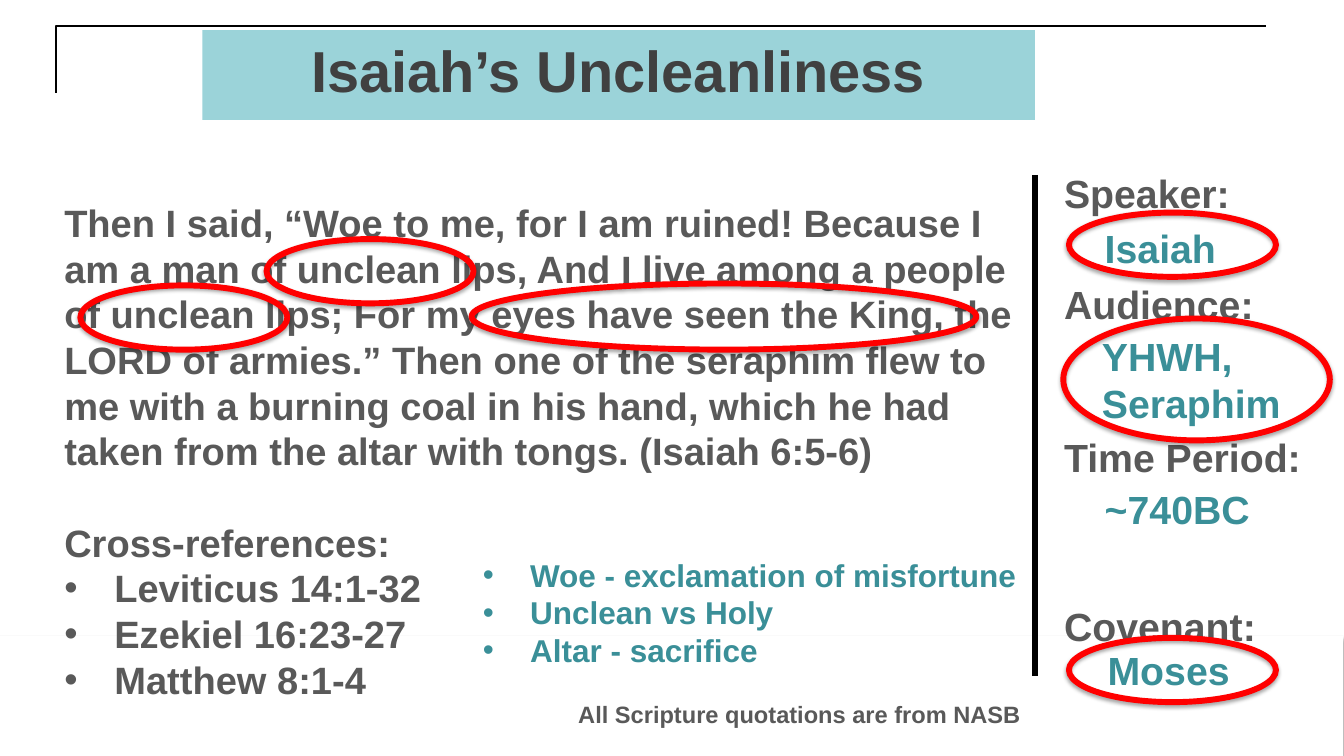
from typing import NamedTuple

from lxml.etree import SubElement
from pptx import Presentation
from pptx.dml.color import RGBColor
from pptx.enum.shapes import MSO_CONNECTOR, MSO_SHAPE
from pptx.enum.text import MSO_ANCHOR, MSO_AUTO_SIZE, PP_ALIGN
from pptx.oxml.ns import qn
from pptx.util import Inches, Pt

BLACK = RGBColor(0x00, 0x00, 0x00)
WHITE = RGBColor(0xFF, 0xFF, 0xFF)
RED = RGBColor(0xFF, 0x00, 0x00)
AQUA = RGBColor(0x9B, 0xD3, 0xD9)
TEAL = RGBColor(0x3A, 0x8F, 0x98)
CHARCOAL = RGBColor(0x40, 0x40, 0x40)
GRAY = RGBColor(0x59, 0x59, 0x59)

PASSAGE = (
    "Then I said, “Woe to me, for I am ruined! Because I am a man of unclean lips, "
    "And I live among a people of unclean lips; For my eyes have seen the King, the "
    "LORD of armies.” Then one of the seraphim flew to me with a burning coal in his "
    "hand, which he had taken from the altar with tongs. (Isaiah 6:5-6)"
)
REFERENCES = ["Leviticus 14:1-32", "Ezekiel 16:23-27", "Matthew 8:1-4"]
NOTES = ["Woe - exclamation of misfortune", "Unclean vs Holy", "Altar - sacrifice"]


class Area(NamedTuple):
    left: float
    top: float
    width: float
    height: float

    def lengths(self) -> list:
        return [Inches(value) for value in self]


class Label(NamedTuple):
    area: Area
    lines: list
    size: float
    color: RGBColor


LABEL_LEFT, LABEL_SIZE = 11.16, 29.9
LABELS = [
    Label(Area(LABEL_LEFT, top, width, 0.6), [text], LABEL_SIZE, GRAY)
    for text, top, width in [
        ("Speaker:", 1.74, 1.97),
        ("Audience:", 2.92, 2.23),
        ("Time Period:", 4.54, 2.73),
        ("Covenant:", 6.32, 2.25),
    ]
] + [
    Label(Area(11.59, 2.32, 1.39, 0.6), ["Isaiah"], LABEL_SIZE, TEAL),
    Label(Area(11.56, 3.47, 2.11, 1.11), ["YHWH,", "Seraphim"], LABEL_SIZE, TEAL),
    Label(Area(11.59, 5.09, 1.75, 0.6), ["~740BC"], LABEL_SIZE, TEAL),
    Label(Area(11.62, 6.79, 1.51, 0.6), ["Moses"], LABEL_SIZE, TEAL),
    Label(Area(6.02, 7.36, 4.93, 0.4),
          ["All Scripture quotations are from NASB"], 18, GRAY),
]

RINGS = [
    Area(0.85, 3.02, 2.19, 0.68),
    Area(2.82, 2.53, 2.19, 0.68),
    Area(4.99, 3, 5.34, 0.7),
    Area(11.31, 6.75, 2.19, 0.68),
    Area(11.31, 2.25, 2.19, 0.68),
    Area(11.25, 3.37, 2.82, 1.29),
]


def apply(target, values: dict) -> None:
    for name, value in values.items():
        setattr(target, name, value)


def place(shape, area: Area) -> None:
    apply(shape, dict(zip(("left", "top", "width", "height"), area.lengths())))


def prepare_frame(box, wrap: bool):
    frame = box.text_frame
    apply(frame, {
        "word_wrap": wrap, "auto_size": MSO_AUTO_SIZE.NONE,
        "vertical_anchor": MSO_ANCHOR.TOP,
        "margin_left": Inches(0.1), "margin_right": Inches(0.1),
        "margin_top": Inches(0.05), "margin_bottom": Inches(0.05),
    })
    return frame


def write(frame, lines: list, size: float, color: RGBColor,
          bullet_indent: float = 0, align=PP_ALIGN.LEFT) -> list:
    """Append one paragraph per line, bulleted when an indent is given."""
    paras = []
    for line in lines:
        para = frame.paragraphs[0] if not frame.text else frame.add_paragraph()
        apply(para, {"alignment": align, "line_spacing": 1.0,
                     "space_before": Pt(0), "space_after": Pt(0)})
        properties = para._p.get_or_add_pPr()
        properties.set("marL", str(Inches(bullet_indent)))
        properties.set("indent", str(-Inches(bullet_indent)))
        if bullet_indent:
            SubElement(properties, qn("a:buFont")).set("typeface", "Arial")
            SubElement(properties, qn("a:buChar")).set("char", "•")
        else:
            SubElement(properties, qn("a:buNone"))
        span = para.add_run()
        span.text = line
        apply(span.font, {"name": "Arial", "size": Pt(size), "bold": True})
        span.font.color.rgb = color
        paras.append(para)
    return paras


def add_soft_shadow(shape) -> None:
    shape.shadow.inherit = False
    effects = shape._element.spPr.find(qn("a:effectLst"))
    shadow = SubElement(effects, qn("a:outerShdw"), blurRad=str(Pt(3.1)),
                        dist=str(Pt(1.8)), dir="5400000", rotWithShape="0")
    color = SubElement(shadow, qn("a:srgbClr"), val="000000")
    SubElement(color, qn("a:alpha"), val="35000")


def add_ring(page, area: Area) -> None:
    ring = page.shapes.add_shape(MSO_SHAPE.OVAL, *area.lengths())
    ring.fill.background()
    ring.line.color.rgb = RED
    ring.line.width = Pt(4.5)
    add_soft_shadow(ring)


def add_label(page, label: Label) -> None:
    box = page.shapes.add_textbox(*label.area.lengths())
    write(prepare_frame(box, False), label.lines, label.size, label.color)


def add_backdrop(page) -> None:
    # Corner line at the top left
    builder = page.shapes.build_freeform(Inches(0.59), Inches(0.98))
    builder.add_line_segments(
        [(Inches(0.59), Inches(0.27)), (Inches(13.39), Inches(0.27))], close=False)
    corner = builder.convert_to_shape()
    corner.fill.background()
    corner.line.color.rgb = BLACK
    corner.line.width = Pt(1.5)
    corner.shadow.inherit = False

    # White band along the bottom
    band = page.shapes.add_shape(
        MSO_SHAPE.RECTANGLE, *Area(-0.01, 6.73, 14.22, 1.27).lengths())
    band.fill.solid()
    band.fill.fore_color.rgb = WHITE
    band.line.fill.background()
    add_soft_shadow(band)

    # Both go behind the placeholders
    for shape in (band, corner):
        page.shapes._spTree.insert(2, shape._element)


def main() -> None:
    deck = Presentation()
    deck.slide_width, deck.slide_height = Inches(14.22), Inches(8)
    page = deck.slides.add_slide(deck.slide_layouts[1])
    add_backdrop(page)

    # Title
    title = page.shapes.title
    place(title, Area(2.14, 0.32, 8.81, 0.95))
    title.fill.solid()
    title.fill.fore_color.rgb = AQUA
    write(prepare_frame(title, True), ["Isaiah’s Uncleanliness"], 44, CHARCOAL,
          align=PP_ALIGN.CENTER)

    # Passage and cross-references
    body = page.placeholders[1]
    place(body, Area(0.58, 2.06, 10.39, 5.94))
    frame = prepare_frame(body, True)
    write(frame, [PASSAGE], 29, GRAY)
    heading = write(frame, ["Cross-references:"], 29, GRAY)[0]
    heading.space_before = Pt(34.8)
    write(frame, REFERENCES, 29, GRAY, bullet_indent=0.53)

    # Divider
    divider = page.shapes.add_connector(
        MSO_CONNECTOR.STRAIGHT, Inches(10.95), Inches(1.85), Inches(10.95), Inches(7.15))
    divider.line.color.rgb = BLACK
    divider.line.width = Pt(4.5)
    SubElement(divider._element.spPr, qn("a:effectLst"))

    # Side labels, rings and word notes
    for label in LABELS:
        add_label(page, label)
    for area in RINGS:
        add_ring(page, area)
    notes = page.shapes.add_textbox(*Area(5.01, 5.83, 6.06, 1.72).lengths())
    write(prepare_frame(notes, True), NOTES, 24, TEAL, bullet_indent=0.5)

    deck.save("out.pptx")


if __name__ == "__main__":
    main()
